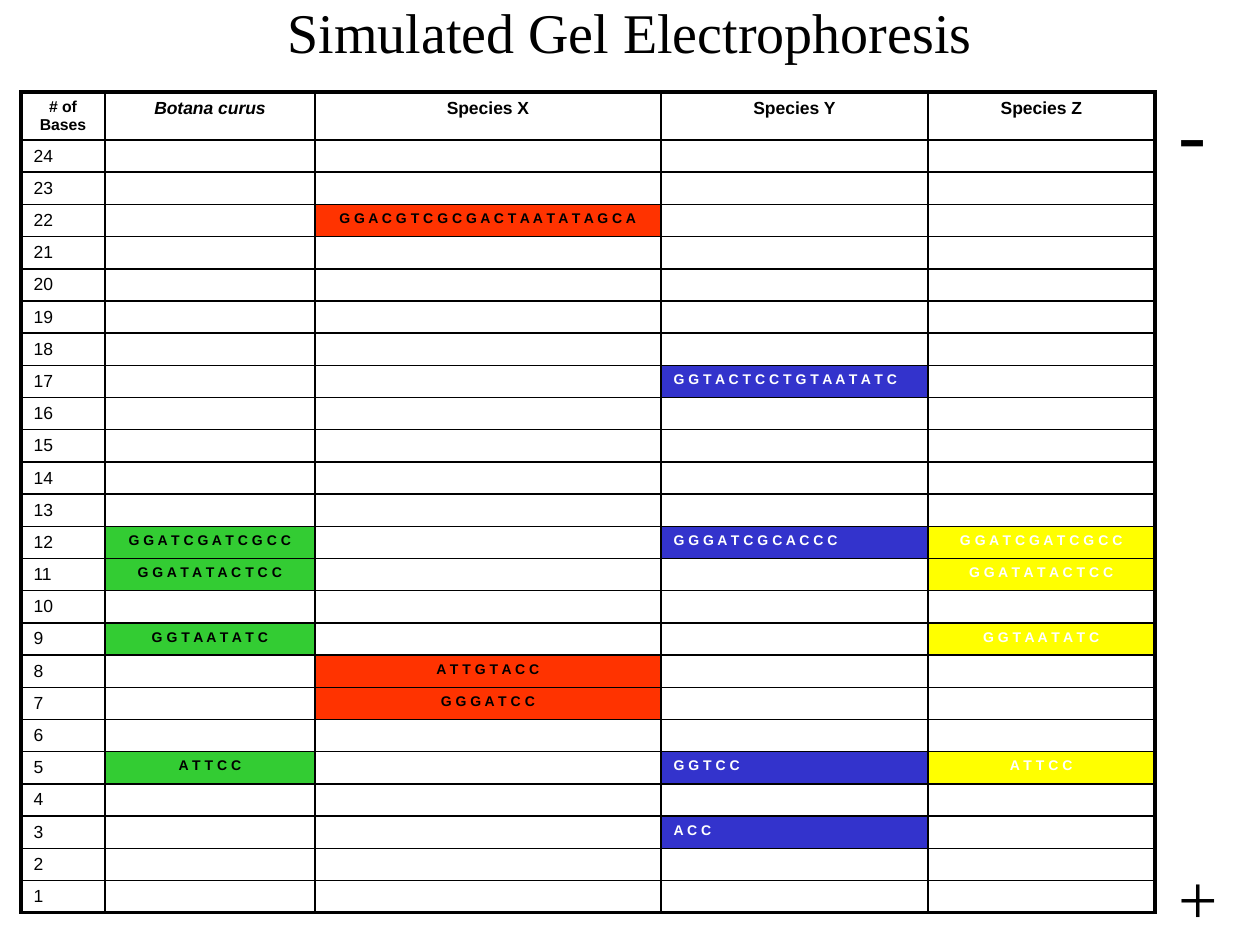
import pptx
import pptx.dml.color
import pptx.enum.text
import pptx.oxml.ns
import pptx.util
from lxml import etree

RGBColor = pptx.dml.color.RGBColor
ALIGN = pptx.enum.text.PP_ALIGN
ANCHOR = pptx.enum.text.MSO_ANCHOR
AUTO_SIZE = pptx.enum.text.MSO_AUTO_SIZE
qn = pptx.oxml.ns.qn

BLACK = RGBColor(0x00, 0x00, 0x00)
WHITE = RGBColor(0xFF, 0xFF, 0xFF)
GREEN = RGBColor(0x33, 0xCC, 0x33)
RED = RGBColor(0xFF, 0x33, 0x00)
BLUE = RGBColor(0x33, 0x33, 0xCC)
YELLOW = RGBColor(0xFF, 0xFF, 0x00)

MAX_BASES = 24
COLUMN_WIDTHS = [84, 210, 346, 267, 227]
HEADER_HEIGHT, ROW_HEIGHT = 47, 32
HEADINGS = ["# of Bases", "Botana curus", "Species X", "Species Y", "Species Z"]
LANES = [
    (1, GREEN, BLACK, ALIGN.CENTER, ["GGATCGATCGCC", "GGATATACTCC", "GGTAATATC", "ATTCC"]),
    (2, RED, BLACK, ALIGN.CENTER, ["GGACGTCGCGACTAATATAGCA", "ATTGTACC", "GGGATCC"]),
    (3, BLUE, WHITE, ALIGN.LEFT, ["GGTACTCCTGTAATATC", "GGGATCGCACCC", "GGTCC", "ACC"]),
    (4, YELLOW, WHITE, ALIGN.CENTER, ["GGATCGATCGCC", "GGATATACTCC", "GGTAATATC", "ATTCC"]),
]


def px(length):
    return pptx.util.Emu(round(length * 914400 / 126))


def place(shape, box):
    shape.left, shape.top, shape.width, shape.height = [px(length) for length in box]


def write(frame, text, size, font="Arial", color=BLACK, align=ALIGN.LEFT,
          bold=False, italic=False, space_before=None):
    frame.text = text
    para = frame.paragraphs[0]
    para.alignment = align
    if space_before:
        spacing = etree.Element(qn("a:spcBef"))
        etree.SubElement(spacing, qn("a:spcPct"), val=str(space_before * 1000))
        para._p.get_or_add_pPr().insert(0, spacing)
    for span in para.runs:
        span.font.size = pptx.util.Pt(size)
        span.font.name = font
        span.font.color.rgb = color
        span.font.bold = bold
        span.font.italic = italic
    return para


def set_borders(cell, widths):
    properties = cell._tc.get_or_add_tcPr()
    for position, (side, width) in enumerate(widths.items()):
        line = etree.Element(qn(f"a:ln{side}"), w=str(pptx.util.Pt(width)))
        fill = etree.SubElement(line, qn("a:solidFill"))
        etree.SubElement(fill, qn("a:srgbClr"), val=str(BLACK))
        properties.insert(position, line)


def add_title(page, box):
    title = page.shapes.title
    place(title, box)
    write(title.text_frame, "Simulated Gel Electrophoresis", 32, "Times New Roman",
          align=ALIGN.CENTER)
    title.text_frame.vertical_anchor = ANCHOR.MIDDLE
    title.text_frame.auto_size = AUTO_SIZE.NONE


def prepare_cells(table):
    last_row, last_column = len(table.rows) - 1, len(table.columns) - 1
    for row in range(last_row + 1):
        for column in range(last_column + 1):
            cell = table.cell(row, column)
            cell.fill.background()
            edges = {"L": column == 0, "R": column == last_column,
                     "T": row == 0, "B": row == last_row}
            set_borders(cell, {side: 2.25 if outer else 1 for side, outer in edges.items()})
            para = cell.text_frame.paragraphs[0]
            etree.SubElement(para._p, qn("a:endParaRPr"), sz="800")


def add_gel(page, left, top):
    height = HEADER_HEIGHT + MAX_BASES * ROW_HEIGHT
    box = [px(length) for length in (left, top, sum(COLUMN_WIDTHS), height)]
    table = page.shapes.add_table(MAX_BASES + 1, len(HEADINGS), *box).table
    table.first_row = table.horz_banding = False
    for column, width in zip(table.columns, COLUMN_WIDTHS):
        column.width = px(width)
    for index, row in enumerate(table.rows):
        row.height = px(ROW_HEIGHT if index else HEADER_HEIGHT)
    prepare_cells(table)

    for column, heading in enumerate(HEADINGS):
        write(table.cell(0, column).text_frame, heading, 10 if column else 9,
              align=ALIGN.CENTER, bold=True, italic=column == 1, space_before=20)
    for row in range(1, MAX_BASES + 1):
        para = write(table.cell(row, 0).text_frame, str(MAX_BASES + 1 - row), 10,
                     space_before=20)
        para._p.pPr.set("marL", str(px(73)))
        para._p.pPr.set("indent", str(-px(73)))
    for column, fill, color, align, fragments in LANES:
        for fragment in fragments:
            cell = table.cell(MAX_BASES + 1 - len(fragment), column)
            cell.fill.solid()
            cell.fill.fore_color.rgb = fill
            write(cell.text_frame, " ".join(fragment), 8, color=color, align=align,
                  bold=True, space_before=20)


def add_pole(page, box, sign, size):
    pole = page.shapes.add_textbox(*[px(length) for length in box])
    pole.text_frame.word_wrap = True
    pole.text_frame.auto_size = AUTO_SIZE.SHAPE_TO_FIT_TEXT
    write(pole.text_frame, sign, size, "Times New Roman", space_before=50)


def main():
    deck = pptx.Presentation()
    deck.slide_width, deck.slide_height = px(1260), px(945)
    page = deck.slides.add_slide(deck.slide_layouts[5])
    add_title(page, (63, 0, 1134, 63))
    add_gel(page, 21, 92)
    add_pole(page, (1166, 73, 73, 113), "-", 48)
    add_pole(page, (1166, 848, 73, 97), "+", 40)
    deck.save("out.pptx")


if __name__ == "__main__":
    main()
